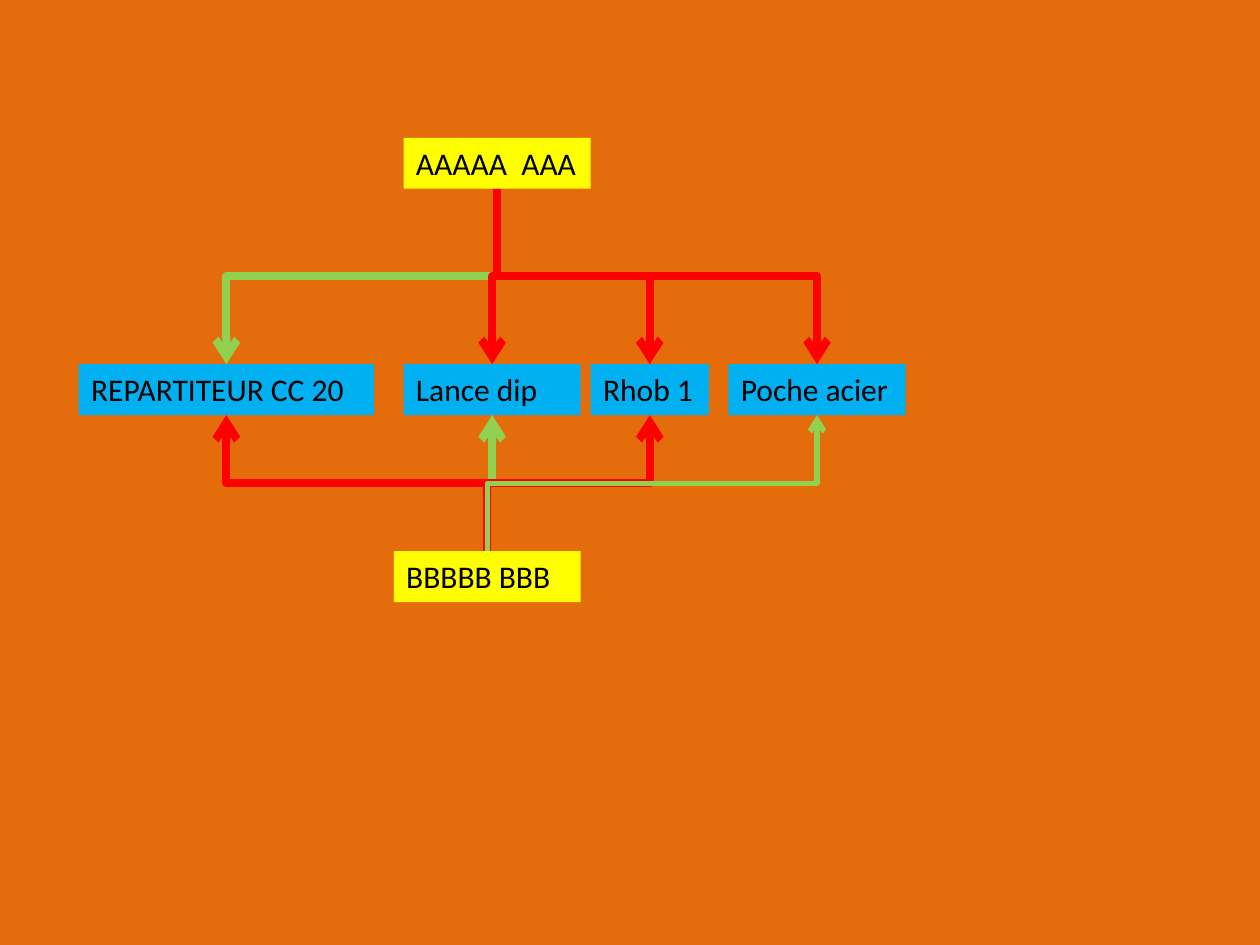
from dataclasses import dataclass

from lxml import etree
from pptx import Presentation
from pptx.dml.color import RGBColor
from pptx.enum.shapes import MSO_CONNECTOR
from pptx.enum.text import MSO_AUTO_SIZE
from pptx.oxml.ns import qn
from pptx.util import Inches, Pt

ELBOW = MSO_CONNECTOR.ELBOW
FIT_SHAPE = MSO_AUTO_SIZE.SHAPE_TO_FIT_TEXT
TOP, BOTTOM = 0, 2
COLUMNS, ROWS = 100, 75


@dataclass(frozen=True)
class Theme:
    background: str = "E46C0A"
    source: str = "FFFF00"
    target: str = "00B0F0"
    red: str = "FF0000"
    green: str = "92D050"
    text: str = "000000"
    font: str = "Calibri"
    text_size: float = 18
    thick: float = 4.5
    thin: float = 3


class Diagram:
    """Draws labels and arrows on one slide, measured in grid columns and rows."""

    def __init__(self, presentation, theme):
        self.theme = theme
        self.column = presentation.slide_width / COLUMNS
        self.row = presentation.slide_height / ROWS
        self.slide = presentation.slides.add_slide(presentation.slide_layouts[6])
        fill = self.slide.background.fill
        fill.solid()
        fill.fore_color.rgb = RGBColor.from_string(theme.background)

    def label(self, text, column, row, columns, color, rows=4.04):
        shape = self.slide.shapes.add_textbox(
            round(column * self.column), round(row * self.row),
            round(columns * self.column), round(rows * self.row))
        shape.fill.solid()
        shape.fill.fore_color.rgb = RGBColor.from_string(color)
        frame = shape.text_frame
        frame.word_wrap = True
        frame.auto_size = FIT_SHAPE
        paragraph = frame.paragraphs[0]
        paragraph.text = text
        paragraph.font.name = self.theme.font
        paragraph.font.size = Pt(self.theme.text_size)
        paragraph.font.color.rgb = RGBColor.from_string(self.theme.text)
        return shape

    def arrow(self, start, end, color, width):
        """Join two labels by an elbow that leaves and arrives vertically."""
        down = start.top < end.top
        start_x, end_x = (shape.left + shape.width // 2 for shape in (start, end))
        start_y = start.top + start.height if down else start.top
        end_y = end.top if down else end.top + end.height
        connector = self.slide.shapes.add_connector(ELBOW, start_x, start_y, end_x, end_y)
        connector.begin_connect(start, BOTTOM if down else TOP)
        connector.end_connect(end, TOP if down else BOTTOM)

        # A vertical elbow is a horizontal one turned by a quarter about its centre.
        length, breadth = abs(end_y - start_y), abs(end_x - start_x)
        rightward = end_x > start_x
        transform = connector.element.spPr.xfrm
        transform.rot = 270 if rightward == down else 90
        transform.flipH, transform.flipV = rightward, not down
        connector.left = (start_x + end_x - length) // 2
        connector.top = (start_y + end_y - breadth) // 2
        connector.width, connector.height = length, breadth

        connector.line.color.rgb = RGBColor.from_string(color)
        connector.line.width = Pt(width)
        line = connector.line._get_or_add_ln()
        etree.SubElement(line, qn("a:tailEnd"), type="arrow")
        etree.SubElement(connector.element.spPr, qn("a:effectLst"))


def main():
    presentation = Presentation()
    presentation.slide_width, presentation.slide_height = Inches(10), Inches(7.5)
    theme = Theme()
    diagram = Diagram(presentation, theme)

    upper = diagram.label("AAAAA  AAA", 32.03, 10.94, 14.84, theme.source)
    lower = diagram.label("BBBBB BBB", 31.25, 43.75, 14.84, theme.source)
    targets = [
        diagram.label(text, column, 28.91, columns, theme.target)
        for text, column, columns in (
            ("REPARTITEUR CC 20", 6.25, 23.44),
            ("Lance dip", 32.03, 14.06),
            ("Rhob 1", 46.88, 9.38),
            ("Poche acier", 57.81, 14.06),
        )
    ]

    red, green = (theme.red, theme.thick), (theme.green, theme.thick)
    thin_green = (theme.green, theme.thin)
    for source, styles in (
        (upper, (green, red, red, red)),
        (lower, (red, green, red, thin_green)),
    ):
        for target, (color, width) in zip(targets, styles):
            diagram.arrow(source, target, color, width)

    presentation.save("out.pptx")


if __name__ == "__main__":
    main()
